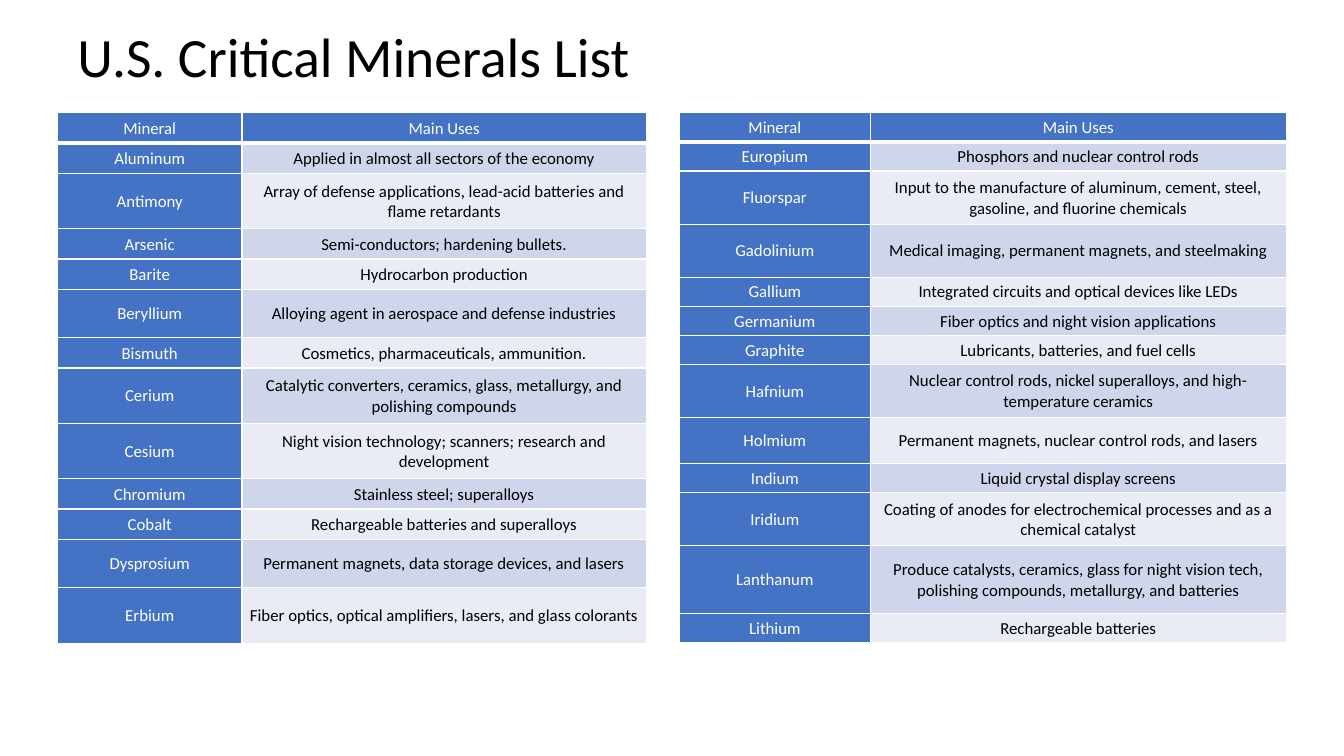
from collections import namedtuple
from dataclasses import dataclass

from lxml.etree import SubElement
from pptx import Presentation
from pptx.dml.color import RGBColor as Color
from pptx.enum.text import MSO_ANCHOR as Anchor, PP_ALIGN as Align
from pptx.oxml.ns import qn
from pptx.util import Inches, Pt

Box = namedtuple("Box", "left top width height")


@dataclass(frozen=True)
class Theme:
    font: str = "Calibri"
    title_size: float = 39.6
    cell_size: float = 12
    ink: str = "000000"
    white: str = "FFFFFF"
    key: str = "4472C4"
    bands: tuple = ("CFD5EA", "E9EBF5")
    border: float = 1
    header_border: float = 3


THEME = Theme()
HEADER = ("Mineral", "Main Uses")

# Each entry: relative row height, mineral, main uses
LEFT_HEADER_HEIGHT = 0.3
LEFT_MINERALS = [
    (0.3, "Aluminum", "Applied in almost all sectors of the economy"),
    (0.55, "Antimony", "Array of defense applications, lead-acid batteries and flame retardants"),
    (0.3, "Arsenic", "Semi-conductors; hardening bullets."),
    (0.3, "Barite", "Hydrocarbon production"),
    (0.48, "Beryllium", "Alloying agent in aerospace and defense industries"),
    (0.3, "Bismuth", "Cosmetics, pharmaceuticals, ammunition."),
    (0.55, "Cerium", "Catalytic converters, ceramics, glass, metallurgy, and polishing compounds"),
    (0.55, "Cesium", "Night vision technology; scanners; research and development"),
    (0.3, "Chromium", "Stainless steel; superalloys"),
    (0.3, "Cobalt", "Rechargeable batteries and superalloys"),
    (0.48, "Dysprosium", "Permanent magnets, data storage devices, and lasers"),
    (0.55, "Erbium", "Fiber optics, optical amplifiers, lasers, and glass colorants"),
]
RIGHT_HEADER_HEIGHT = 0.29
RIGHT_MINERALS = [
    (0.29, "Europium", "Phosphors and nuclear control rods"),
    (0.53, "Fluorspar", "Input to the manufacture of aluminum, cement, steel, gasoline, "
                        "and fluorine chemicals"),
    (0.53, "Gadolinium", "Medical imaging, permanent magnets, and steelmaking"),
    (0.29, "Gallium", "Integrated circuits and optical devices like LEDs"),
    (0.29, "Germanium", "Fiber optics and night vision applications"),
    (0.29, "Graphite", "Lubricants, batteries, and fuel cells"),
    (0.53, "Hafnium", "Nuclear control rods, nickel superalloys, and high-temperature ceramics"),
    (0.46, "Holmium", "Permanent magnets, nuclear control rods, and lasers"),
    (0.29, "Indium", "Liquid crystal display screens"),
    (0.53, "Iridium", "Coating of anodes for electrochemical processes and as a chemical catalyst"),
    (0.68, "Lanthanum", "Produce catalysts, ceramics, glass for night vision tech, "
                        "polishing compounds, metallurgy, and batteries"),
    (0.29, "Lithium", "Rechargeable batteries"),
]


def apply(target, formats):
    for name, value in formats.items():
        setattr(target, name, value)


def write(para, text, size, color):
    span = para.add_run()
    span.text = text
    apply(span.font, {"name": THEME.font, "size": Pt(size)})
    span.font.color.rgb = Color.from_string(color)


def add_borders(cell, bottom):
    """Draw white rules; they must precede the cell fill in the XML."""
    props = cell._tc.get_or_add_tcPr()
    for side in "LRTB":
        width = bottom if side == "B" else THEME.border
        line = SubElement(props, qn(f"a:ln{side}"), w=str(Pt(width)))
        fill = SubElement(line, qn("a:solidFill"))
        SubElement(fill, qn("a:srgbClr"), val=THEME.white)


def add_title(page, box, text):
    frame = page.shapes.add_textbox(*map(Inches, box)).text_frame
    apply(frame, {"word_wrap": True, "vertical_anchor": Anchor.MIDDLE})
    para = frame.paragraphs[0]
    para.line_spacing = 0.9
    write(para, text, THEME.title_size, THEME.ink)


def fill_cell(cell, text, fill, color, bottom):
    apply(cell, {
        "margin_left": Inches(0.01), "margin_right": Inches(0.01),
        "margin_top": Inches(0.01), "margin_bottom": 0,
        "vertical_anchor": Anchor.MIDDLE,
    })
    add_borders(cell, bottom)
    cell.fill.solid()
    cell.fill.fore_color.rgb = Color.from_string(fill)
    para = cell.text_frame.paragraphs[0]
    para.alignment = Align.CENTER
    write(para, text, THEME.cell_size, color)


def add_mineral_table(page, box, key_width, header_height, minerals):
    rows = [(header_height, *HEADER), *minerals]
    table = page.shapes.add_table(len(rows), len(HEADER), *map(Inches, box)).table
    for column, width in zip(table.columns, (key_width, box.width - key_width)):
        column.width = Inches(width)

    # Row heights share out the height of the box
    scale = box.height / sum(height for height, *_ in rows)
    for index, (height, *texts) in enumerate(rows):
        table.rows[index].height = Inches(height * scale)
        is_header = index == 0
        bottom = THEME.header_border if is_header else THEME.border
        for column, text in enumerate(texts):
            is_key = is_header or column == 0
            fill = THEME.key if is_key else THEME.bands[(index - 1) % 2]
            color = THEME.white if is_key else THEME.ink
            fill_cell(table.cell(index, column), text, fill, color, bottom)


def main():
    deck = Presentation()
    apply(deck, {"slide_width": Inches(13.33), "slide_height": Inches(7.5)})
    page = deck.slides.add_slide(deck.slide_layouts[6])

    # Title
    add_title(page, Box(0.67, 0.24, 11.75, 0.7), "U.S. Critical Minerals List")

    # Two mineral tables side by side
    add_mineral_table(page, Box(0.57, 1.12, 5.84, 5.26), 1.83,
                      LEFT_HEADER_HEIGHT, LEFT_MINERALS)
    add_mineral_table(page, Box(6.74, 1.12, 6.02, 5.26), 1.89,
                      RIGHT_HEADER_HEIGHT, RIGHT_MINERALS)

    deck.save("out.pptx")


if __name__ == "__main__":
    main()
